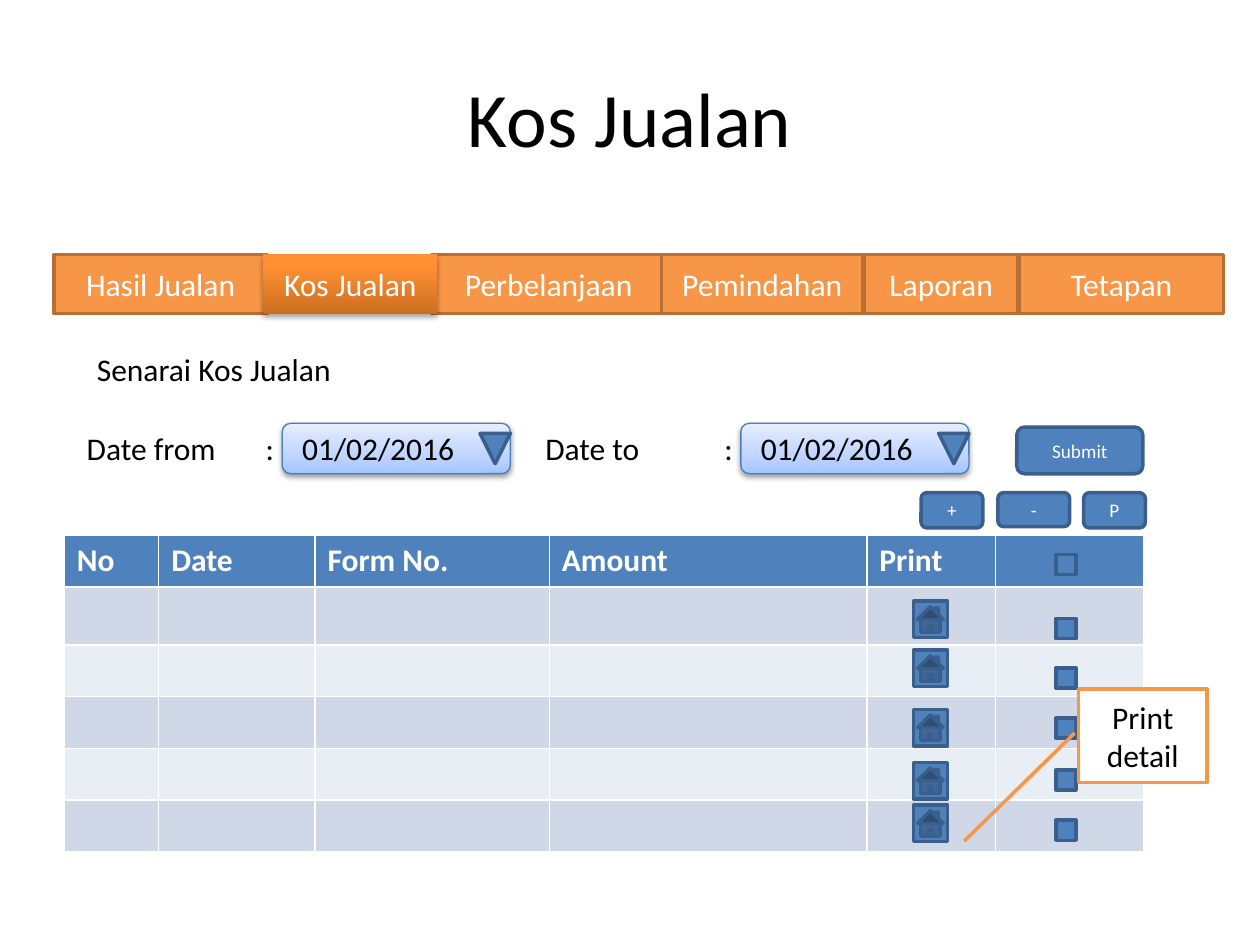
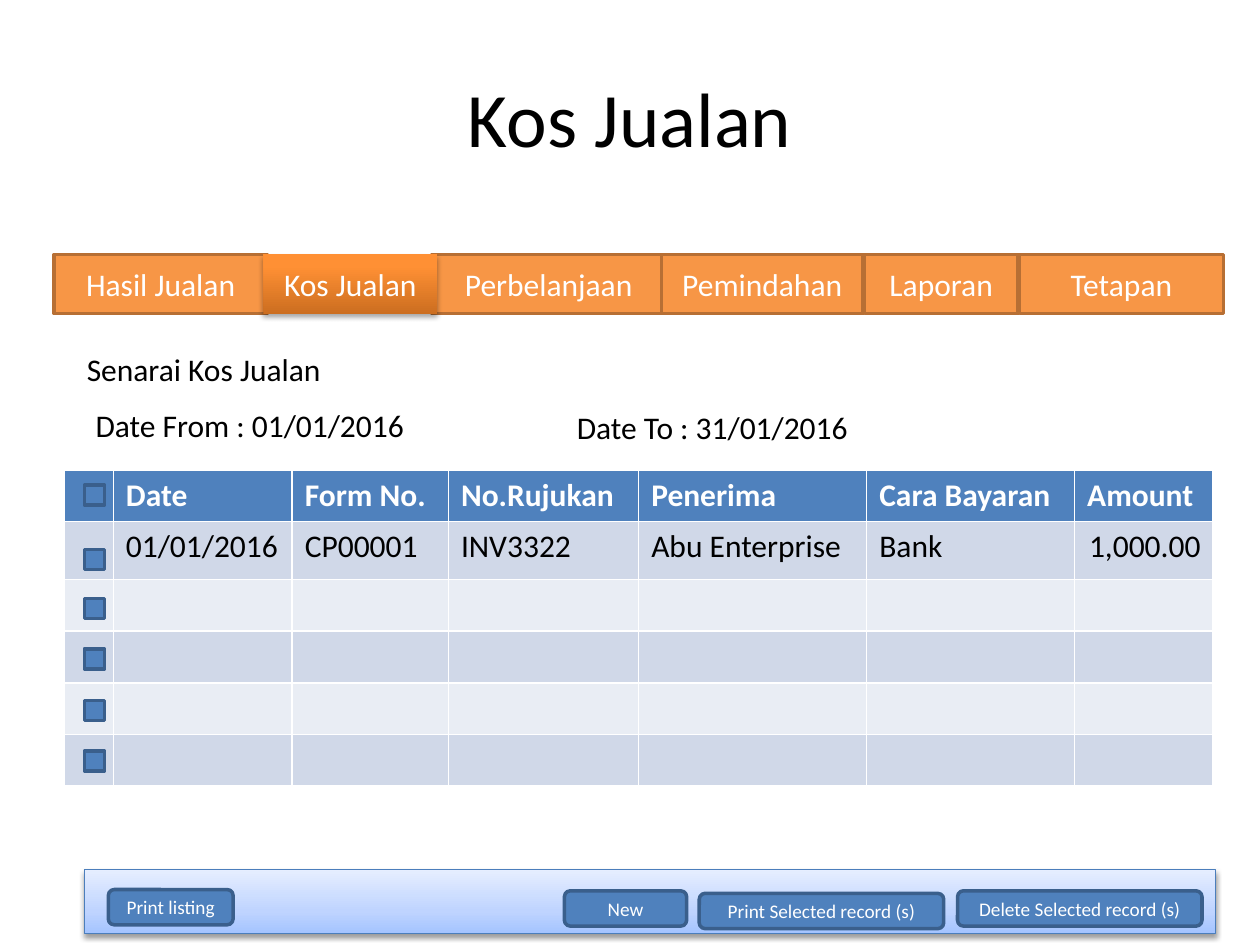
"""Two wireframe slides of a cost of sales module."""
from dataclasses import dataclass
from typing import Optional

from lxml import etree
from pptx import Presentation
from pptx import util as u
from pptx.dml.color import RGBColor
from pptx.enum import shapes, text
from pptx.oxml.ns import qn

PX = 9144
FONT = "Calibri"
COLORS = {
    "black": "000000", "white": "FFFFFF",
    "blue": "4F81BD", "navy": "3A5F8C", "sky": "4B7EBC",
    "orange": "F79646", "rust": "B76F34",
    "band": "D0D8E8", "pale": "E9EDF4",
    "amber_low": "CC6E20", "amber_mid": "FF9034", "amber_high": "FF9136",
    "ice_low": "A4C4FF", "ice_mid": "BFD4FF", "ice_high": "E6EEFF",
}
SHAPE = shapes.MSO_SHAPE
ALIGN = text.PP_ALIGN


@dataclass(frozen=True)
class Area:
    """A rectangle in px."""
    left: int
    top: int
    width: int
    height: int

    def emu(self) -> tuple[int, ...]:
        """Return the four lengths in EMU."""
        return tuple(u.Emu(n * PX) for n in (self.left, self.top, self.width, self.height))


@dataclass(frozen=True)
class Look:
    """Fill, outline, shadow and font of a kind of shape."""
    fill: str = ""
    line: str = ""
    weight: float = 2
    size: int = 18
    ink: str = "white"
    stops: tuple[tuple[int, str], ...] = ()
    shadow: Optional[tuple[int, float]] = None


@dataclass(frozen=True)
class Item:
    """A labelled shape of the interface."""
    label: str
    area: Area


@dataclass(frozen=True)
class Grid:
    """A table with a header row and mostly empty records."""
    left: int
    top: int
    columns: tuple[int, ...]
    header: tuple[str, ...]
    record: tuple[str, ...] = ()


TAB = Look("orange", "rust")
ACTIVE_TAB = Look(stops=((0, "amber_low"), (80, "amber_mid"), (100, "amber_high")),
                  shadow=(35, 1.8))
BUTTON = Look("blue", "navy", size=11)
PANEL = Look(line="sky", weight=0.75, shadow=(38, 1.6),
             stops=((0, "ice_low"), (35, "ice_mid"), (100, "ice_high")))
CALLOUT = Look("white", "orange", ink="black")

TITLE = "Kos Jualan"
TABS = (("Hasil Jualan", 43, 169), ("Perbelanjaan", 343, 185), ("Laporan", 686, 122),
        ("Tetapan", 809, 162), ("Pemindahan", 525, 160), (TITLE, 209, 138))
ROWS = (41, 46, 41, 41, 41, 41)
CHECK_OFFSETS = (0, 51, 90, 130, 171, 211)
DATE_STOPS = (142, 171)

COST_GRID = Grid(51, 425, (75, 124, 186, 252, 102, 118),
                 ("No", "Date", "Form No.", "Amount", "Print", ""))
RESULT_GRID = Grid(
    51, 373, (39, 142, 124, 151, 181, 165, 110),
    ("", "Date", "Form No.", "No.Rujukan", "Penerima", "Cara Bayaran", "Amount"),
    ("", "01/01/2016", "CP00001", "INV3322", "Abu Enterprise", "Bank", "1,000.00"))

DATE_FIELDS = (("Date from", 59), ("Date to", 423))
PRINT_TOPS = (477, 516, 563, 605, 639)
SEARCH_BUTTONS = (
    Item("-", Area(792, 391, 57, 27)),
    Item("P", Area(860, 391, 49, 28)),
    Item("+", Area(731, 391, 49, 28)),
    Item("Submit", Area(807, 339, 100, 37)),
)
FOOTER_BUTTONS = (
    Item("Delete Selected record (s)", Area(760, 707, 194, 28)),
    Item("Print listing", Area(86, 706, 99, 28)),
    Item("Print Selected record (s)", Area(555, 709, 194, 28)),
    Item("New", Area(448, 707, 97, 28)),
)


def color(name: str) -> RGBColor:
    """Look up a colour."""
    return RGBColor.from_string(COLORS[name])


def write(frame, words: str, size: int = 18, ink: str = "black", align=None, bold: bool = False):
    """Put one styled paragraph into a text frame and return it."""
    para = frame.paragraphs[0]
    para.text = words
    if align is not None:
        para.alignment = align
    font = para.font
    font.name, font.size, font.bold = FONT, u.Pt(size), bold
    font.color.rgb = color(ink)
    return para


def add_color(parent, name: str):
    """Append a colour element."""
    return etree.SubElement(parent, qn("a:srgbClr"), val=COLORS[name])


def paint_gradient(shape, stops: tuple[tuple[int, str], ...]) -> None:
    """Fill a shape with an upward gradient."""
    shape.fill.gradient()
    shape.fill.gradient_angle = 90
    stop_list = shape._element.spPr.find(qn("a:gradFill")).find(qn("a:gsLst"))
    for stop in list(stop_list):
        stop_list.remove(stop)
    for percent, name in stops:
        add_color(etree.SubElement(stop_list, qn("a:gs"), pos=str(percent * 1000)), name)


def cast_shadow(shape, alpha: int, distance: float) -> None:
    """Add a soft shadow below a shape."""
    effects = shape._element.spPr.find(qn("a:effectLst"))
    outer = etree.SubElement(effects, qn("a:outerShdw"), blurRad=str(u.Pt(3.1)),
                             dist=str(u.Pt(distance)), dir="5400000", rotWithShape="0")
    etree.SubElement(add_color(outer, "black"), qn("a:alpha"), val=str(alpha * 1000))


def draw_shape(page, kind, area: Area, look: Look, label: str = ""):
    """Draw a preset shape with an optional centred label."""
    shape = page.shapes.add_shape(kind, *area.emu())
    shape.shadow.inherit = False
    if look.stops:
        paint_gradient(shape, look.stops)
    else:
        shape.fill.solid()
        shape.fill.fore_color.rgb = color(look.fill)
    if look.line:
        shape.line.color.rgb = color(look.line)
        shape.line.width = u.Pt(look.weight)
    else:
        shape.line.fill.background()
    if look.shadow:
        cast_shadow(shape, *look.shadow)
    if label:
        write(shape.text_frame, label, look.size, look.ink, ALIGN.CENTER)
    return shape


def draw_text(page, words: str, area: Area, stops: tuple[int, ...] = ()) -> None:
    """Draw a line of body text, with tab stops where given."""
    frame = page.shapes.add_textbox(*area.emu()).text_frame
    frame.word_wrap = bool(stops)
    para = write(frame, words)
    if stops:
        tabs = etree.Element(qn("a:tabLst"))
        for stop in stops:
            etree.SubElement(tabs, qn("a:tab"), pos=str(stop * PX), algn="l")
        para._p.get_or_add_pPr().insert(0, tabs)


def draw_frame(page) -> None:
    """Draw the title and the navigation tabs."""
    frame = page.shapes.add_textbox(*Area(50, 30, 900, 125).emu()).text_frame
    frame.word_wrap = True
    frame.vertical_anchor = text.MSO_ANCHOR.MIDDLE
    write(frame, TITLE, 44, align=ALIGN.CENTER)
    for label, left, width in TABS:
        look = ACTIVE_TAB if label == TITLE else TAB
        draw_shape(page, SHAPE.RECTANGLE, Area(left, 202, width, 47), look, label)


def draw_grid(page, grid: Grid) -> None:
    """Draw a banded table."""
    area = Area(grid.left, grid.top, sum(grid.columns), sum(ROWS))
    table = page.shapes.add_table(len(ROWS), len(grid.columns), *area.emu()).table
    for column, width in zip(table.columns, grid.columns):
        column.width = u.Emu(width * PX)
    blank = ("",) * len(grid.columns)
    records = (grid.header, grid.record or blank) + (blank,) * (len(ROWS) - 2)
    for index, (row, height, record) in enumerate(zip(table.rows, ROWS, records)):
        row.height = u.Emu(height * PX)
        head = index == 0
        fill = "blue" if head else ("pale", "band")[index % 2]
        for cell, words in zip(row.cells, record):
            cell.fill.solid()
            cell.fill.fore_color.rgb = color(fill)
            align = ALIGN.RIGHT if words == "1,000.00" else None
            write(cell.text_frame, words, ink="white" if head else "black",
                  align=align, bold=head)


def draw_checks(page, left: int, top: int) -> None:
    """Draw one check box per table row."""
    for offset in CHECK_OFFSETS:
        draw_shape(page, SHAPE.RECTANGLE, Area(left, top + offset, 16, 16), BUTTON)


def draw_buttons(page, buttons: tuple[Item, ...]) -> None:
    """Draw rounded buttons."""
    for button in buttons:
        draw_shape(page, SHAPE.ROUNDED_RECTANGLE, button.area, BUTTON, button.label)


def draw_date_field(page, label: str, left: int) -> None:
    """Draw a labelled date picker."""
    draw_shape(page, SHAPE.ROUNDED_RECTANGLE, Area(left + 165, 336, 181, 40), PANEL)
    draw_text(page, f"{label}\t:\t01/02/2016", Area(left, 336, 317, 40), DATE_STOPS)
    arrow = draw_shape(page, SHAPE.ISOSCELES_TRIANGLE, Area(left + 322, 344, 24, 24), BUTTON)
    arrow.rotation = 180


def build_search(page) -> None:
    """Build the search page."""
    draw_frame(page)
    draw_text(page, "Senarai Kos Jualan", Area(67, 273, 208, 40))
    draw_grid(page, COST_GRID)
    draw_checks(page, 838, 440)
    for label, left in DATE_FIELDS:
        draw_date_field(page, label, left)
    for top in PRINT_TOPS:
        draw_shape(page, SHAPE.ACTION_BUTTON_HOME, Area(725, top, 27, 29), BUTTON)
    callout = draw_shape(page, SHAPE.LINE_CALLOUT_1, Area(856, 547, 102, 74), CALLOUT,
                         "Print detail")
    for index, value in enumerate((0.47, -0.03, 1.63, -0.89)):
        callout.adjustments[index] = value
    draw_buttons(page, SEARCH_BUTTONS)


def build_result(page) -> None:
    """Build the listing page."""
    draw_frame(page)
    draw_grid(page, RESULT_GRID)
    draw_checks(page, 67, 385)
    draw_shape(page, SHAPE.RECTANGLE, Area(67, 690, 898, 51), PANEL)
    draw_buttons(page, FOOTER_BUTTONS)
    draw_text(page, "Date From : 01/01/2016", Area(66, 317, 268, 40))
    draw_text(page, "Date To : 31/01/2016", Area(448, 319, 238, 40))
    draw_text(page, "Senarai Kos Jualan", Area(59, 273, 208, 40))


def main() -> None:
    """Build and save the deck."""
    deck = Presentation()
    deck.slide_width, deck.slide_height = u.Emu(1000 * PX), u.Emu(750 * PX)
    for build in (build_search, build_result):
        build(deck.slides.add_slide(deck.slide_layouts[6]))
    deck.save("out.pptx")


if __name__ == "__main__":
    main()
